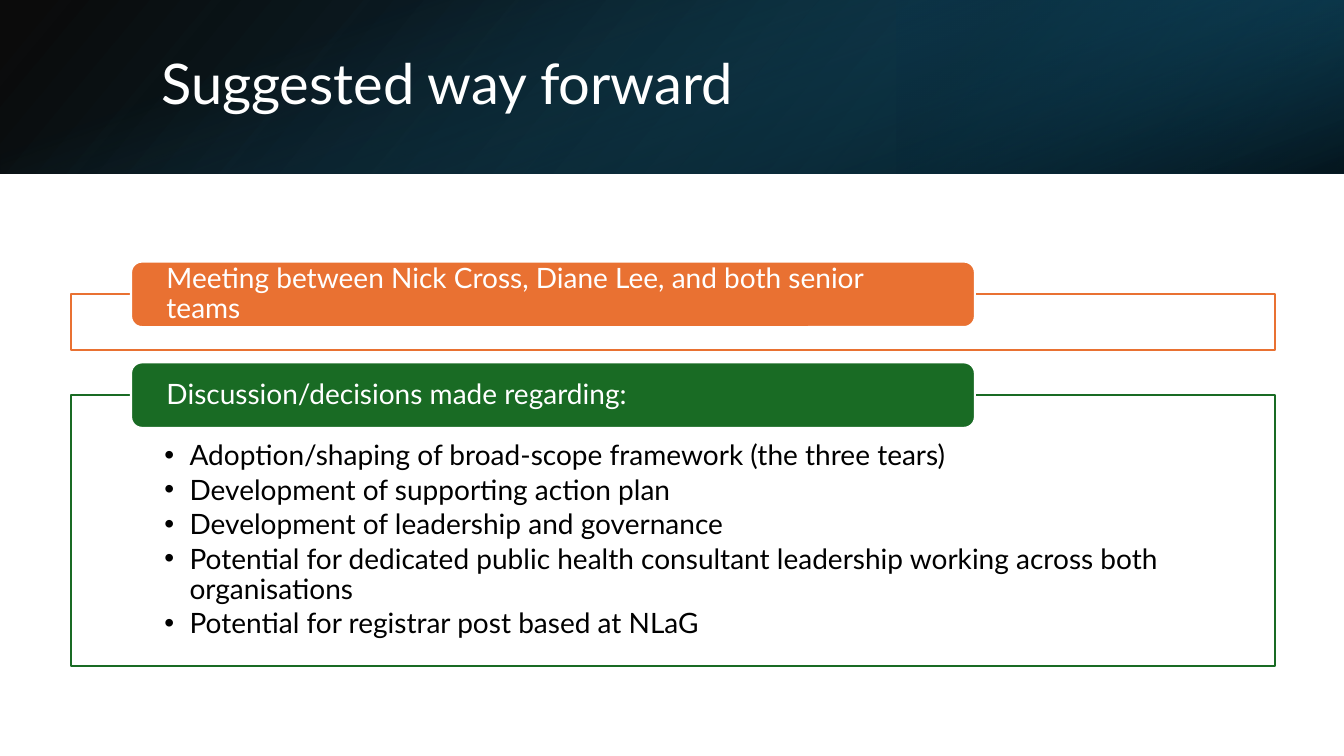
from lxml import etree
from pptx import Presentation
from pptx.dml.color import RGBColor
from pptx.enum.shapes import MSO_SHAPE as Shape
from pptx.enum.text import MSO_ANCHOR as Anchor, PP_ALIGN as Align
from pptx.oxml import parse_xml
from pptx.oxml.ns import nsdecls, qn
from pptx.util import Inches, Pt

WHITE = RGBColor(0xFF, 0xFF, 0xFF)
BLACK = RGBColor(0x00, 0x00, 0x00)
ORANGE = RGBColor(0xE9, 0x71, 0x32)
GREEN = RGBColor(0x19, 0x6B, 0x24)
TEAL = RGBColor(0x15, 0x60, 0x82)
MID_TEAL = RGBColor(0x10, 0x48, 0x62)
DARK_TEAL = RGBColor(0x0B, 0x30, 0x41)
FONT = "Lato"

# Content
TITLE = "Suggested way forward"
# Step: heading, colour, frame top, frame height, bullets
STEPS = [
    ("Meeting between Nick Cross, Diane Lee, and both senior teams",
     ORANGE, 2.92, 0.55, []),
    ("Discussion/decisions made regarding:", GREEN, 3.92, 2.69, [
        "Adoption/shaping of broad-scope framework (the three tears)",
        "Development of supporting action plan",
        "Development of leadership and governance",
        "Potential for dedicated public health consultant leadership "
        "working across both organisations",
        "Potential for registrar post based at NLaG",
    ]),
]

# Banner layer: box, rotation, flipped, gradient angle, stops (position, colour, opacity)
SLIDE_W, SLIDE_H, BANNER_H = 13.33, 7.5, 1.72
BANNER = [
    ((0, 0, SLIDE_W, BANNER_H), 0, True, 140,
     [(0, BLACK, 96), (100, MID_TEAL, 100)]),
    ((8.89, 0, 4.44, BANNER_H), 180, True, 320,
     [(19, DARK_TEAL, 68), (100, TEAL, 79)]),
    (((SLIDE_W - BANNER_H) / 2, (BANNER_H - SLIDE_W) / 2, BANNER_H, SLIDE_W),
     90, False, 340, [(23, TEAL, 0), (99, BLACK, 74)]),
]

FRAME_LEFT, FRAME_W = 0.7, 11.95
LABEL_LEFT, LABEL_W, LABEL_H = 1.3, 8.37, 0.65
LABEL_RISE = LABEL_H / 2  # labels straddle the top edge of their frame

prs = Presentation()
prs.slide_width, prs.slide_height = Inches(SLIDE_W), Inches(SLIDE_H)
slide = prs.slides.add_slide(prs.slide_layouts[5])


def add_box(kind, box, fill=None, line=None):
    shape = slide.shapes.add_shape(kind, *map(Inches, box))
    shape.shadow.inherit = False
    if fill is not None:
        shape.fill.solid()
        shape.fill.fore_color.rgb = fill
    if line is None:
        shape.line.fill.background()
    else:
        shape.line.color.rgb = line
        shape.line.width = Pt(1.5)
    return shape


def set_gradient(shape, angle, stops):
    gradient_stops = "".join(
        f'<a:gs pos="{pos * 1000}"><a:srgbClr val="{color}">'
        f'<a:alpha val="{opacity * 1000}"/></a:srgbClr></a:gs>'
        for pos, color, opacity in stops)
    gradient = parse_xml(
        f'<a:gradFill {nsdecls("a")} rotWithShape="1"><a:gsLst>{gradient_stops}'
        f'</a:gsLst><a:lin ang="{angle * 60000}" scaled="0"/></a:gradFill>')
    shape._element.spPr.find(qn("a:prstGeom")).addnext(gradient)


def set_insets(frame, left, top, right, bottom):
    frame.margin_left, frame.margin_top = Inches(left), Inches(top)
    frame.margin_right, frame.margin_bottom = Inches(right), Inches(bottom)
    frame.word_wrap = True


def style(paragraph, size, color):
    paragraph.alignment = Align.LEFT
    paragraph.line_spacing = 0.9
    for run in paragraph.runs:
        run.font.name, run.font.size = FONT, Pt(size)
        run.font.color.rgb = color


def add_bullet(paragraph):
    props = paragraph._p.get_or_add_pPr()
    props.set("marL", str(Inches(0.25)))
    props.set("indent", str(-Inches(0.25)))
    etree.SubElement(props, qn("a:buFont")).set("typeface", "Arial")
    etree.SubElement(props, qn("a:buChar")).set("char", "•")


# Banner
for box, rotation, flipped, angle, stops in BANNER:
    layer = add_box(Shape.RECTANGLE, box)
    layer.rotation = rotation
    if flipped:
        layer._element.spPr.xfrm.set("flipH", "1")
    set_gradient(layer, angle, stops)

# Title, brought in front of the banner
title = slide.shapes.title
title.left, title.top = Inches(1.5), Inches(0.38)
title.width, title.height = Inches(10.98), Inches(0.96)
title.text_frame.text = TITLE
title.text_frame.vertical_anchor = Anchor.MIDDLE
style(title.text_frame.paragraphs[0], 40, WHITE)
slide.shapes._spTree.append(title._element)

# Steps: outlined frame with bullets, then the label on its top edge
for heading, color, top, height, bullets in STEPS:
    frame = add_box(Shape.RECTANGLE, (FRAME_LEFT, top, FRAME_W, height), WHITE, color)
    if bullets:
        body = frame.text_frame
        set_insets(body, 0.93, 0.46, 0.93, 0.16)
        body.vertical_anchor = Anchor.TOP
        body.text = "\n".join(bullets)
        for item in body.paragraphs:
            add_bullet(item)
            style(item, 20, BLACK)
            item.space_after = Pt(3)

    label = add_box(Shape.ROUNDED_RECTANGLE,
                    (LABEL_LEFT, top - LABEL_RISE, LABEL_W, LABEL_H), color, WHITE)
    set_insets(label.text_frame, 0.32, 0, 0.32, 0)
    label.text_frame.vertical_anchor = Anchor.MIDDLE
    label.text_frame.text = heading
    style(label.text_frame.paragraphs[0], 20, WHITE)

prs.save("out.pptx")
